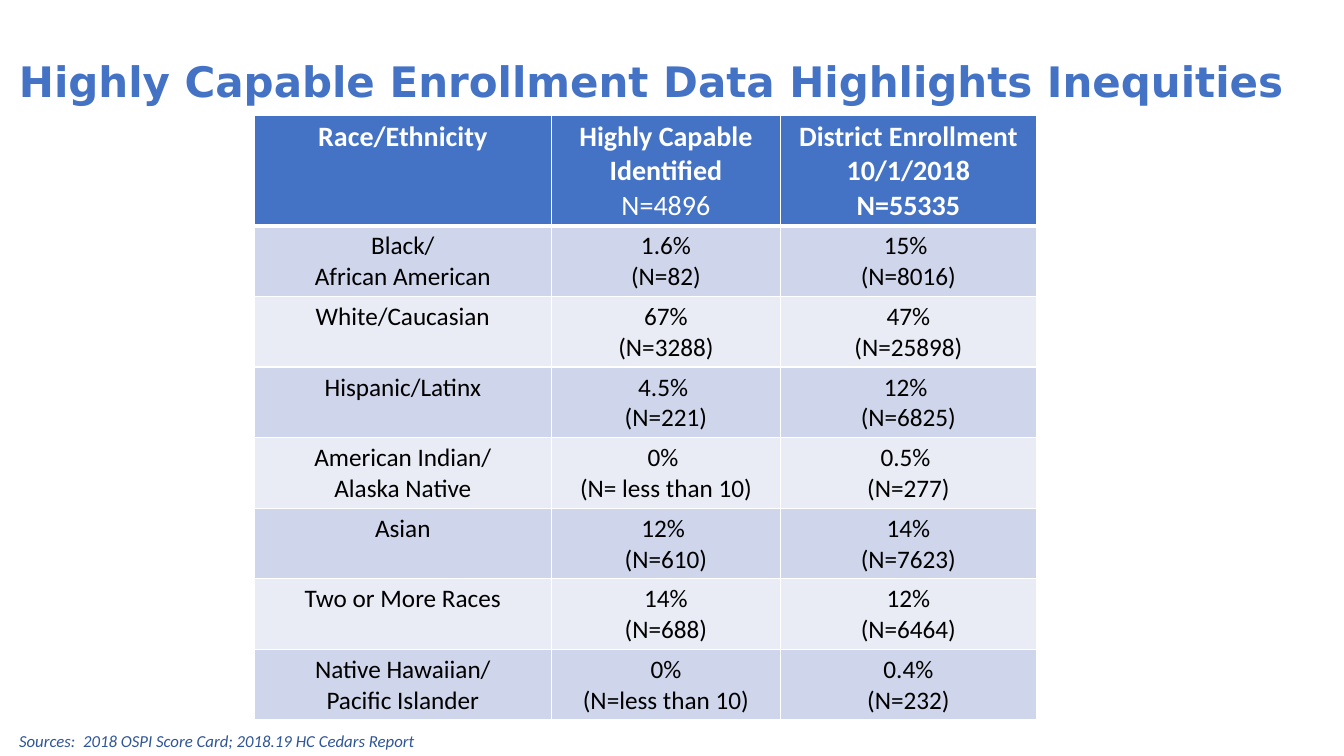
import pptx
import pptx.dml.color
import pptx.enum.text
import pptx.oxml
import pptx.oxml.ns
import pptx.util

Inches = pptx.util.Inches
RGBColor = pptx.dml.color.RGBColor
CENTER = pptx.enum.text.PP_ALIGN.CENTER
MIDDLE = pptx.enum.text.MSO_ANCHOR.MIDDLE
TOP = pptx.enum.text.MSO_ANCHOR.TOP

BLUE = RGBColor(0x44, 0x72, 0xC4)
DARK_BLUE = RGBColor(0x2F, 0x55, 0x97)
BAND_DARK = RGBColor(0xCF, 0xD5, 0xEA)
BAND_LIGHT = RGBColor(0xE9, 0xEB, 0xF5)
WHITE = RGBColor(0xFF, 0xFF, 0xFF)
BLACK = RGBColor(0x00, 0x00, 0x00)

COLUMN_WIDTHS = [2.95, 2.27, 2.54]
ROW_HEIGHTS = [1.06] + [0.68] * 7

# Each cell is a list of lines
ENROLLMENT = [
    [["Race/Ethnicity"], ["Highly Capable Identified", "N=4896"],
     ["District Enrollment 10/1/2018", "N=55335"]],
    [["Black/", "African American"], ["1.6%", "(N=82)"], ["15% ", "(N=8016)"]],
    [["White/Caucasian"], ["67%", "(N=3288)"], ["47%", "(N=25898)"]],
    [["Hispanic/Latinx"], ["4.5% ", "(N=221)"], ["12% ", "(N=6825)"]],
    [["American Indian/", "Alaska Native"], ["0% ", "(N= less than 10)"], ["0.5% ", "(N=277)"]],
    [["Asian"], ["12% ", "(N=610)"], ["14%", "(N=7623)"]],
    [["Two or More Races"], ["14%", "(N=688)"], ["12%", "(N=6464)"]],
    [["Native Hawaiian/", "Pacific Islander"], ["0%", "(N=less than 10)"], ["0.4%", "(N=232)"]],
]


class SlideBuilder:
    def __init__(self, presentation):
        self.slide = presentation.slides.add_slide(presentation.slide_layouts[6])
        self.base_format = {"name": "Calibri", "bold": False, "italic": False}

    def add_run(self, paragraph, text, size, color, **changes):
        run = paragraph.add_run()
        run.text = text
        values = {**self.base_format, "size": pptx.util.Pt(size), **changes}
        for name, value in values.items():
            setattr(run.font, name, value)
        run.font.color.rgb = color

    def add_text(self, box, text, size, color, anchor=TOP, line_spacing=1.0, **changes):
        shape = self.slide.shapes.add_textbox(*map(Inches, box))
        frame = shape.text_frame
        frame.word_wrap = True
        frame.vertical_anchor = anchor
        paragraph = frame.paragraphs[0]
        paragraph.line_spacing = line_spacing
        self.add_run(paragraph, text, size, color, **changes)

    def add_borders(self, cell, top, bottom):
        properties = cell._tc.get_or_add_tcPr()
        for side, points in {"L": 1, "R": 1, "T": top, "B": bottom}.items():
            properties.append(pptx.oxml.parse_xml(
                f'<a:ln{side} {pptx.oxml.ns.nsdecls("a")} w="{pptx.util.Pt(points)}">'
                f'<a:solidFill><a:srgbClr val="{WHITE}"/></a:solidFill></a:ln{side}>'))

    def fill_cell(self, cell, lines, row):
        header = row == 0
        self.add_borders(cell, 3 if row == 1 else 1, 3 if header else 1)
        cell.fill.solid()
        cell.fill.fore_color.rgb = BLUE if header else BAND_DARK if row % 2 else BAND_LIGHT
        for index, line in enumerate(lines):
            frame = cell.text_frame
            paragraph = frame.add_paragraph() if index else frame.paragraphs[0]
            paragraph.alignment = CENTER
            self.add_run(paragraph, line, 20 if header else 18, WHITE if header else BLACK,
                         bold=header and line != "N=4896")

    def add_table(self, left, top, widths, heights, rows):
        shape = self.slide.shapes.add_table(
            len(heights), len(widths), Inches(left), Inches(top),
            Inches(sum(widths)), Inches(sum(heights)))
        table = shape.table
        for column, width in zip(table.columns, widths):
            column.width = Inches(width)
        for row, height in enumerate(heights):
            table.rows[row].height = Inches(height)
            for column, lines in enumerate(rows[row]):
                self.fill_cell(table.cell(row, column), lines, row)


def main():
    presentation = pptx.Presentation()
    presentation.slide_width = Inches(13.33)
    presentation.slide_height = Inches(7.5)
    builder = SlideBuilder(presentation)

    # Title
    builder.add_text((0.09, 0.19, 13.14, 1.29),
                     "Highly Capable Enrollment Data Highlights Inequities", 30, BLUE,
                     anchor=MIDDLE, line_spacing=0.9, name="DejaVu Sans", bold=True)

    # Enrollment table
    builder.add_table(2.52, 1.14, COLUMN_WIDTHS, ROW_HEIGHTS, ENROLLMENT)

    # Sources
    builder.add_text((0.09, 7.2, 7.58, 0.3),
                     "Sources:  2018 OSPI Score Card; 2018.19 HC Cedars Report",
                     12, DARK_BLUE, italic=True)

    presentation.save("out.pptx")


if __name__ == "__main__":
    main()
